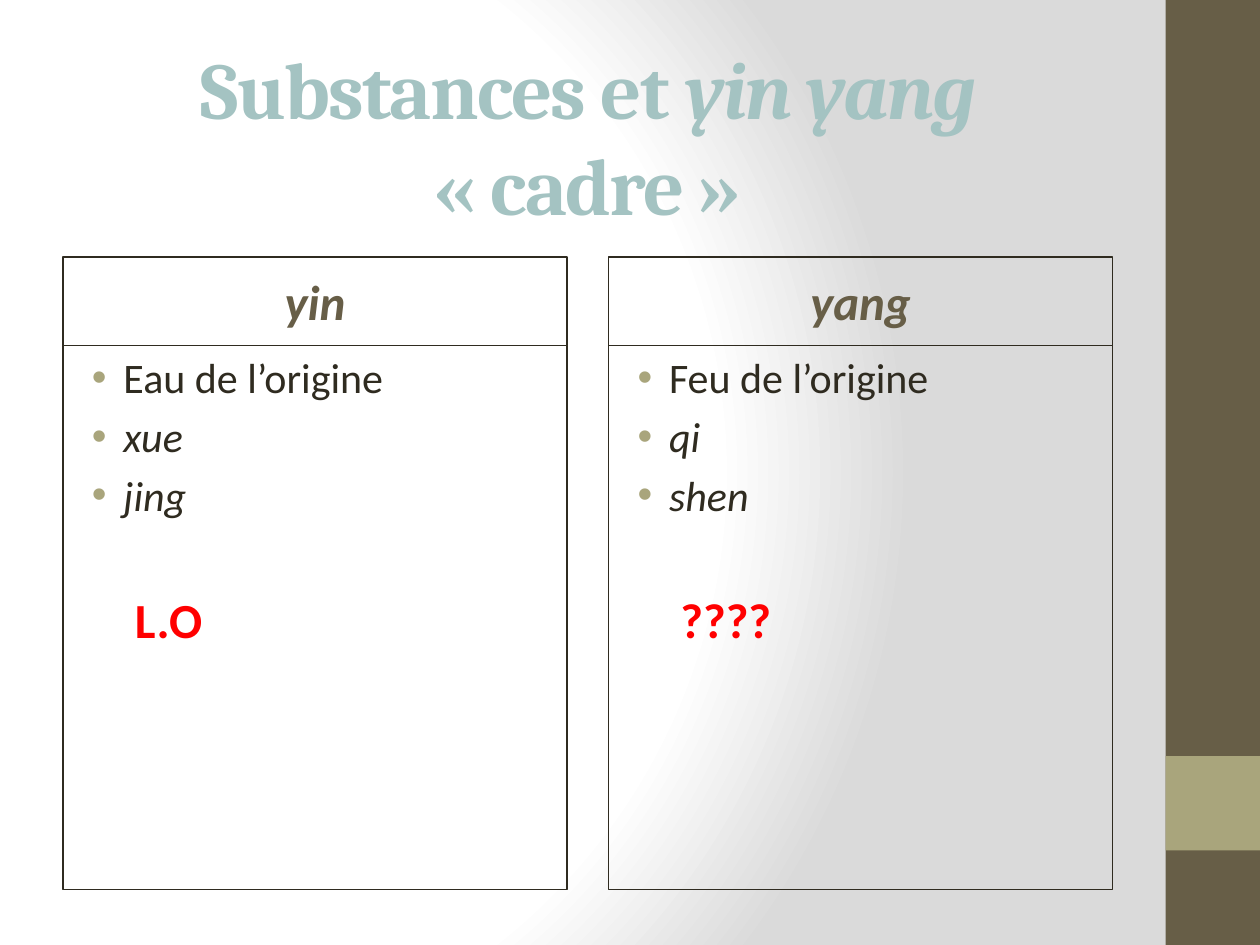
import pptx
import pptx.util
import pptx.dml.color
import pptx.enum.shapes
import pptx.enum.text
import pptx.oxml
import pptx.oxml.ns
import lxml.etree

Inches, Pt = pptx.util.Inches, pptx.util.Pt
PP_ALIGN = pptx.enum.text.PP_ALIGN
ANCHOR = pptx.enum.text.MSO_ANCHOR
qn = pptx.oxml.ns.qn

# Content: (text, italic)
TITLE = [("Substances et ", False), ("yin yang ", True), ("«\u00a0cadre\u00a0»", False)]
COLUMNS = [
    {"heading": "yin", "remark": "L.O",
     "items": [("Eau de l’origine", False), ("xue", True), ("jing", True)]},
    {"heading": "yang", "remark": "????",
     "items": [("Feu de l’origine", False), ("qi", True), ("shen", True)]},
]
BROWN, OLIVE, INK = "675E47", "A9A57C", "2F2B20"
SIDE_BANDS = [(0, 7.5, BROWN), (6, 0.75, OLIVE)]  # top, height, colour
BACKGROUND_STOPS = [(0, "FFFFFF"), (75, "FFFFFF"), (100, "DADADA")]

# Formats
TITLE_FONT = {"name": "Cambria", "size": Pt(46), "bold": True}
HEADING_FONT = {"name": "Calibri", "size": Pt(28), "bold": True, "italic": True}
ITEM_FONT = {"name": "Calibri", "size": Pt(24), "bold": False}
REMARK_FONT = {"name": "Calibri", "size": Pt(28), "bold": True, "italic": False}

# Layout, in inches
LEFT, COLUMN_WIDTH, COLUMN_STEP = 0.5, 4, 4.33
HEADING_TOP, HEADING_HEIGHT, LIST_HEIGHT = 2.04, 0.7, 4.32


def rgb(hex_colour):
    return pptx.dml.color.RGBColor.from_string(hex_colour)


def add_run(paragraph, text, colour, font, **extra):
    run = paragraph.add_run()
    run.text = text
    for attribute, value in {**font, **extra}.items():
        setattr(run.font, attribute, value)
    run.font.color.rgb = rgb(colour)
    return run


def place(holder, left, top, width, height, anchor):
    box = {"left": left, "top": top, "width": width, "height": height}
    for attribute, value in box.items():
        setattr(holder, attribute, Inches(value))
    frame = holder.text_frame
    settings = {"word_wrap": True, "vertical_anchor": anchor,
                "auto_size": pptx.enum.text.MSO_AUTO_SIZE.NONE}
    for attribute, value in settings.items():
        setattr(frame, attribute, value)
    return frame


def outline(holder):
    holder.line.color.rgb = rgb(INK)
    holder.line.width = Pt(0.75)


def indent(paragraph, left, first_line, bullet=None):
    properties = paragraph._p.get_or_add_pPr()
    properties.set("marL", str(Inches(left)))
    properties.set("indent", str(Inches(first_line)))
    if bullet is None:
        lxml.etree.SubElement(properties, qn("a:buNone"))
        return
    colour = lxml.etree.SubElement(properties, qn("a:buClr"))
    lxml.etree.SubElement(colour, qn("a:srgbClr"), val=OLIVE)
    lxml.etree.SubElement(properties, qn("a:buFont"), typeface="Arial")
    lxml.etree.SubElement(properties, qn("a:buChar"), char=bullet)


def paint_background(slide):
    stops = "".join(f'<a:gs pos="{position * 1000}"><a:srgbClr val="{colour}"/></a:gs>'
                    for position, colour in BACKGROUND_STOPS)
    background = pptx.oxml.parse_xml(
        f'<p:bg {pptx.oxml.ns.nsdecls("p", "a")}><p:bgPr><a:gradFill rotWithShape="1">'
        f'<a:gsLst>{stops}</a:gsLst><a:path path="circle">'
        '<a:fillToRect l="20000" t="50000" r="100000" b="50000"/></a:path>'
        '</a:gradFill><a:effectLst/></p:bgPr></p:bg>')
    slide.element.cSld.insert(0, background)


def add_side_bands(slide):
    for top, height, colour in SIDE_BANDS:
        band = slide.shapes.add_shape(
            pptx.enum.shapes.MSO_SHAPE.RECTANGLE,
            Inches(9.25), Inches(top), Inches(0.75), Inches(height))
        band.shadow.inherit = False
        band.fill.solid()
        band.fill.fore_color.rgb = rgb(colour)
        band.line.fill.background()


def fill_title(slide):
    frame = place(slide.shapes.title, LEFT, 0.45, 8.33, 1.25, ANCHOR.MIDDLE)
    paragraph = frame.paragraphs[0]
    paragraph.alignment = PP_ALIGN.CENTER
    for text, italic in TITLE:
        run = add_run(paragraph, text, "A4C3C2", TITLE_FONT, italic=italic)
        run.font._element.set("spc", "-100")


def fill_column(heading_box, list_box, left, column):
    # Heading
    frame = place(heading_box, left, HEADING_TOP, COLUMN_WIDTH, HEADING_HEIGHT, ANCHOR.MIDDLE)
    outline(heading_box)
    paragraph = frame.paragraphs[0]
    paragraph.alignment = PP_ALIGN.CENTER
    add_run(paragraph, column["heading"], BROWN, HEADING_FONT)

    # Bulleted list
    frame = place(list_box, left, HEADING_TOP + HEADING_HEIGHT, COLUMN_WIDTH,
                  LIST_HEIGHT, ANCHOR.TOP)
    outline(list_box)
    for number, (text, italic) in enumerate(column["items"]):
        paragraph = frame.add_paragraph() if number else frame.paragraphs[0]
        indent(paragraph, 0.38, -0.25, "•")
        add_run(paragraph, text, INK, ITEM_FONT, italic=italic)

    # Red remark, set apart below the list
    paragraph = frame.add_paragraph()
    paragraph.space_before = Pt(40)
    indent(paragraph, 0.47, 0)
    add_run(paragraph, column["remark"], "FF0000", REMARK_FONT)


def main():
    deck = pptx.Presentation()
    deck.slide_width, deck.slide_height = Inches(10), Inches(7.5)
    slide = deck.slides.add_slide(deck.slide_layouts.get_by_name("Comparison"))
    paint_background(slide)
    add_side_bands(slide)
    fill_title(slide)
    holders = slide.placeholders
    for number, column in enumerate(COLUMNS):
        fill_column(holders[1 + 2 * number], holders[2 + 2 * number],
                    LEFT + number * COLUMN_STEP, column)
    deck.save("out.pptx")


if __name__ == "__main__":
    main()
